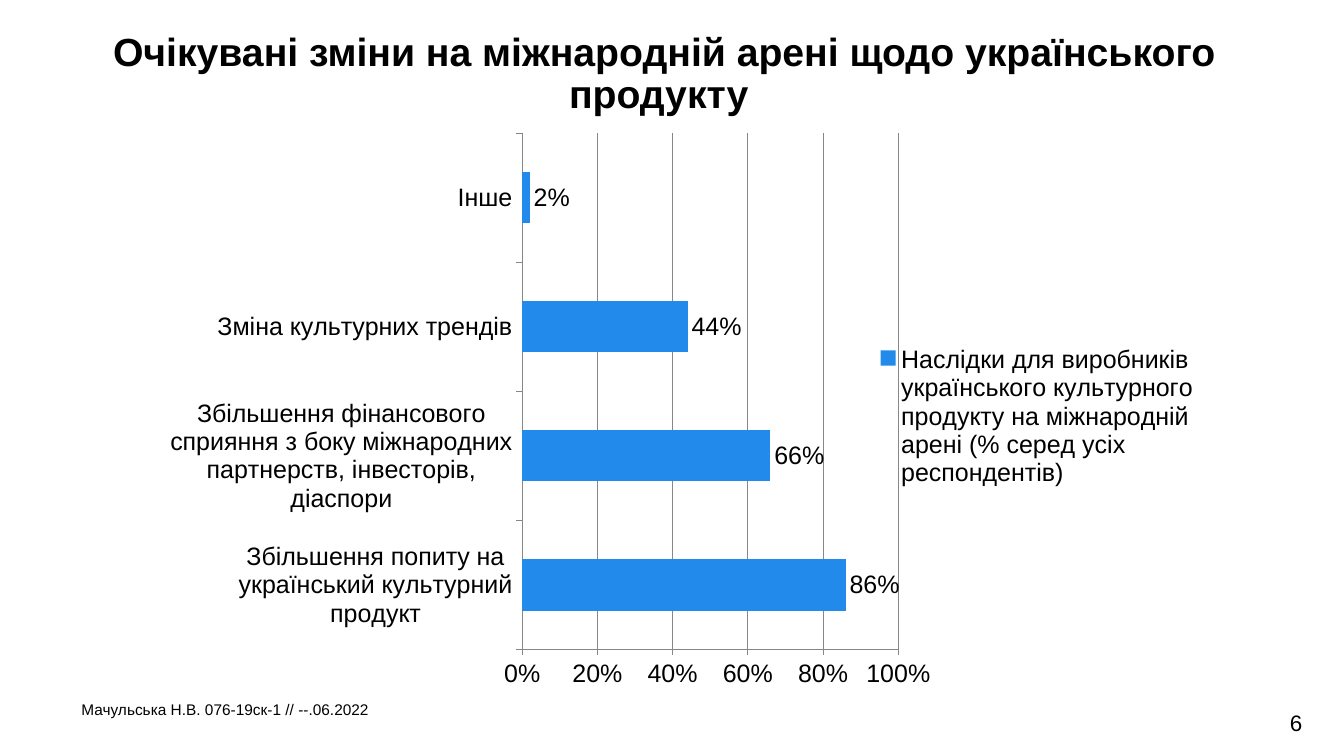
"""Build a slide with a bar chart of expected changes on the international stage."""
from lxml import etree
from pptx import Presentation
from pptx.chart.data import CategoryChartData
from pptx.dml.color import RGBColor
from pptx.enum.chart import XL_CHART_TYPE, XL_LABEL_POSITION, XL_LEGEND_POSITION, XL_TICK_MARK
from pptx.enum.text import MSO_ANCHOR, MSO_AUTO_SIZE, PP_ALIGN
from pptx.oxml.ns import qn
from pptx.util import Cm, Pt

BAR = XL_CHART_TYPE.BAR_CLUSTERED
OUTSIDE_END = XL_LABEL_POSITION.OUTSIDE_END
RIGHT = XL_LEGEND_POSITION.RIGHT
TICK_OUT, TICK_NONE = XL_TICK_MARK.OUTSIDE, XL_TICK_MARK.NONE
TOP = MSO_ANCHOR.TOP
NO_FIT = MSO_AUTO_SIZE.NONE
LEFT, CENTER = PP_ALIGN.LEFT, PP_ALIGN.CENTER

FONT = "Arial"
COLORS = {"text": "000000", "bar": "228AEB", "axis": "878787"}
HEADING = "Очікувані зміни на міжнародній арені щодо українського продукту "
AUTHOR = "Мачульська Н.В. 076-19ск-1 // --.06.2022"
PAGE = "6"
SERIES = ("Наслідки для виробників українського культурного продукту "
          "на міжнародній арені (% серед усіх респондентів)")
CHANGES = [
    ("Збільшення попиту на український культурний продукт", 0.86),
    ("Збільшення фінансового сприяння з боку міжнародних партнерств, "
     "інвесторів, діаспори", 0.66),
    ("Зміна культурних трендів", 0.44),
    ("Інше", 0.02),
]
PLOT = {"x": 0.333, "y": 0.014, "w": 0.365, "h": 0.886}


def color(name):
    return RGBColor.from_string(COLORS[name])


def style(font, size, bold=False):
    font.name, font.size, font.bold = FONT, Pt(size), bold
    font.color.rgb = color("text")


def write(box, place, text, size, align, bold=False, spacing=1.0):
    box.left, box.top, box.width, box.height = (Cm(length) for length in place)
    frame = box.text_frame
    frame.word_wrap = True
    frame.auto_size = NO_FIT
    frame.vertical_anchor = TOP
    paragraph = frame.paragraphs[0]
    paragraph.alignment = align
    paragraph.line_spacing = spacing
    paragraph.space_before = Pt(0)
    run = paragraph.add_run()
    run.text = text
    style(run.font, size, bold)


def place_plot(chart):
    plot_area = chart.element.find(".//" + qn("c:plotArea"))
    for layout in plot_area.findall(qn("c:layout")):
        plot_area.remove(layout)
    layout = etree.Element(qn("c:layout"))
    plot_area.insert(0, layout)
    manual = etree.SubElement(layout, qn("c:manualLayout"))
    settings = {"layoutTarget": "inner", "xMode": "edge", "yMode": "edge", **PLOT}
    for tag, value in settings.items():
        etree.SubElement(manual, qn("c:" + tag)).set("val", str(value))


def add_changes_chart(slide):
    data = CategoryChartData(number_format="0%")
    data.categories = [change for change, _ in CHANGES]
    data.add_series(SERIES, [share for _, share in CHANGES])
    chart = slide.shapes.add_chart(
        BAR, Cm(4.29), Cm(3.15), Cm(26.19), Cm(14.68), data).chart
    style(chart.font, 18)
    chart.has_title = False
    chart.has_legend = True
    chart.legend.position = RIGHT
    chart.legend.include_in_layout = False

    shares = chart.value_axis
    shares.minimum_scale, shares.maximum_scale, shares.major_unit = 0, 1, 0.2
    shares.has_major_gridlines = True
    shares.tick_labels.number_format = "0%"
    shares.tick_labels.number_format_is_linked = False
    for axis in (chart.category_axis, shares):
        axis.major_tick_mark, axis.minor_tick_mark = TICK_OUT, TICK_NONE
    for line in (chart.category_axis.format.line, shares.format.line,
                 shares.major_gridlines.format.line):
        line.color.rgb = color("axis")
        line.width = Pt(0.75)

    plot = chart.plots[0]
    plot.gap_width = 150
    plot.vary_by_categories = False
    plot.has_data_labels = True
    labels = plot.data_labels
    labels.show_value = True
    labels.number_format = "0%"
    labels.number_format_is_linked = False
    labels.position = OUTSIDE_END
    fill = plot.series[0].format.fill
    fill.solid()
    fill.fore_color.rgb = color("bar")
    place_plot(chart)


def main():
    deck = Presentation()
    deck.slide_width, deck.slide_height = Cm(33.87), Cm(19.05)
    slide = deck.slides.add_slide(deck.slide_layouts[5])
    write(slide.shapes.title, (0.33, 0.69, 32.82, 1.57), HEADING, 28, CENTER,
          bold=True, spacing=0.9)
    author = slide.shapes.add_textbox(0, 0, 0, 0)
    write(author, (1.8, 17.58, 27.66, 0.66), AUTHOR, 11, LEFT, spacing=0.9)
    page = slide.shapes.add_textbox(0, 0, 0, 0)
    write(page, (31.85, 17.75, 1.63, 0.94), PAGE, 16, CENTER)
    add_changes_chart(slide)
    deck.save("out.pptx")


if __name__ == "__main__":
    main()
